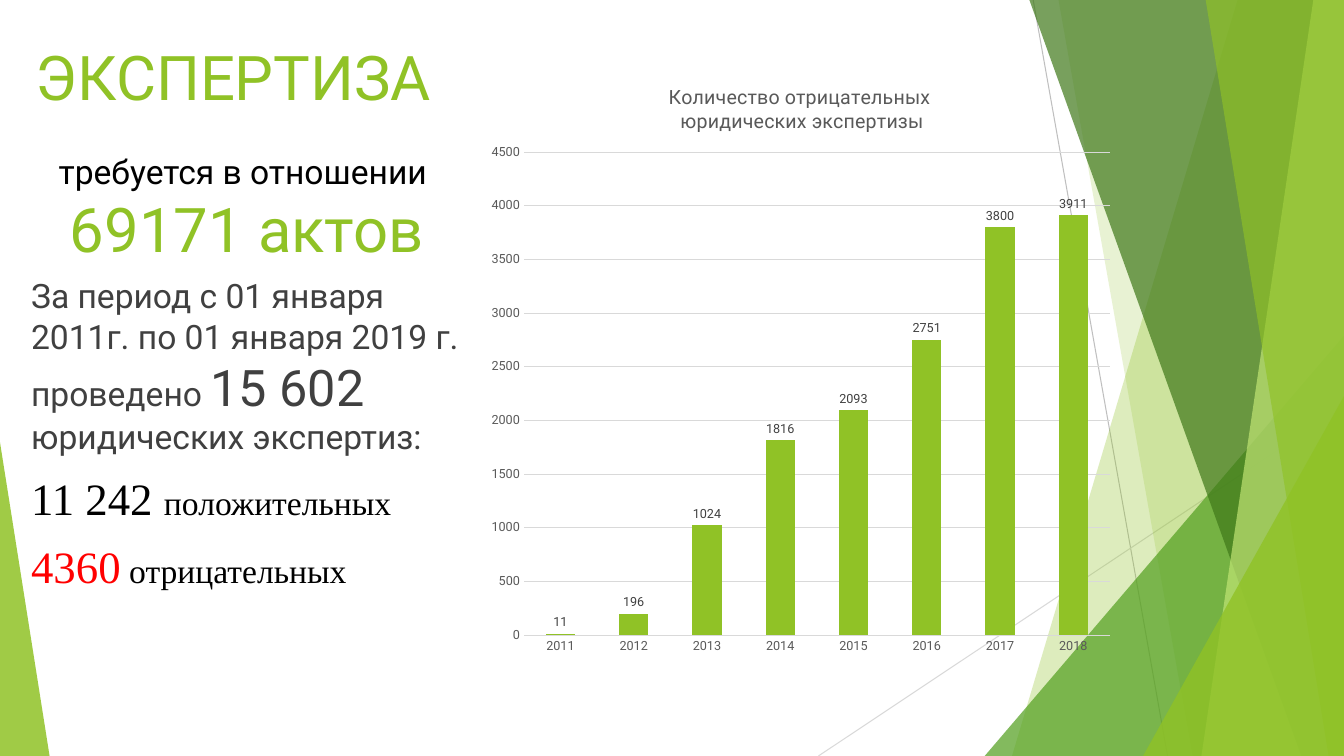
"""Builds the legal review slide with its column chart."""
from lxml import etree
from pptx import Presentation
from pptx.chart import data
from pptx.dml.color import RGBColor
from pptx.enum import chart as kinds, shapes, text
from pptx.oxml import ns
from pptx.util import Pt

LIME = RGBColor(0x90, 0xC2, 0x26)
GREEN = RGBColor(0x54, 0xA0, 0x21)
DARK = RGBColor(0x3F, 0x78, 0x19)
PALE = RGBColor(0xC0, 0xE4, 0x74)
BLACK = RGBColor(0, 0, 0)
RED = RGBColor(0xFF, 0, 0)
INK = RGBColor(0x40, 0x40, 0x40)
GREY = RGBColor(0x59, 0x59, 0x59)
SILVER = RGBColor(0xBF, 0xBF, 0xBF)
MIST = RGBColor(0xD9, 0xD9, 0xD9)
SANS = "Roboto"
SERIF = "Times New Roman"
WIDE, HIGH, TOP = 960, 540, -0.6


def sub(node, tag, **attrs):
    return etree.SubElement(node, ns.qn(tag), **attrs)


class Page:
    def __init__(self, slide):
        self.slide = slide
        self.items = slide.shapes

    def line(self, x1, y1, x2, y2, color):
        line = self.items.add_connector(
            shapes.MSO_CONNECTOR.STRAIGHT, Pt(x1), Pt(y1), Pt(x2), Pt(y2))
        line.line.color.rgb = color
        line.line.width = Pt(0.75)
        sub(line._element.spPr, "a:effectLst")

    def paint(self, shape, color, alpha):
        shape.shadow.inherit = False
        shape.fill.solid()
        shape.fill.fore_color.rgb = color
        shape.line.fill.background()
        tone = shape._element.spPr.find(".//" + ns.qn("a:srgbClr"))
        sub(tone, "a:alpha", val=str(alpha * 1000))

    def facet(self, top, base, color, alpha):
        form = self.items.build_freeform(Pt(top), Pt(TOP))
        ends = [(WIDE, TOP), (WIDE, HIGH), (base, HIGH)]
        form.add_line_segments([(Pt(x), Pt(y)) for x, y in ends])
        self.paint(form.convert_to_shape(), color, alpha)

    def wedge(self, x, y, wide, peak, color, alpha):
        shape = self.items.add_shape(
            shapes.MSO_SHAPE.ISOSCELES_TRIANGLE, Pt(x), Pt(y), Pt(wide), Pt(HIGH - y))
        shape.adjustments[0] = peak
        self.paint(shape, color, alpha)

    def font(self, font, size, color, name=SANS):
        font.size = Pt(size)
        font.name = name
        font.color.rgb = color
        font.bold = False

    def fill(self, frame, paras, align, gap=0):
        for i, runs in enumerate(paras):
            para = frame.add_paragraph() if i else frame.paragraphs[0]
            para.alignment = align
            para.space_before = Pt(gap)
            for words, *style in runs:
                run = para.add_run()
                run.text = words
                self.font(run.font, *style)

    def text(self, x, y, wide, high, paras, align=text.PP_ALIGN.CENTER,
             anchor=text.MSO_ANCHOR.BOTTOM, gap=0):
        frame = self.items.add_textbox(Pt(x), Pt(y), Pt(wide), Pt(high)).text_frame
        frame.word_wrap = True
        frame.vertical_anchor = anchor
        self.fill(frame, paras, align, gap)

    def place(self, node, spot, **sizes):
        old = node.find(ns.qn("c:layout"))
        if old is None:
            old = etree.Element(ns.qn("c:layout"))
            node.insert(1 if node.tag == ns.qn("c:title") else 0, old)
        box = sub(old, "c:manualLayout")
        if sizes:
            sub(box, "c:layoutTarget", val="inner")
        for key in "xy":
            sub(box, f"c:{key}Mode", val="edge")
        for key, part in {**spot, **sizes}.items():
            sub(box, f"c:{key}", val=str(part))

    def chart(self, x, y, wide, high, title, cats, vals):
        feed = data.CategoryChartData()
        feed.categories = cats
        feed.add_series("Series 1", vals)
        chart = self.items.add_chart(
            kinds.XL_CHART_TYPE.COLUMN_CLUSTERED,
            Pt(x), Pt(y), Pt(wide), Pt(high), feed).chart
        self.font(chart.font, 10, BLACK)
        chart.has_legend = False
        chart.has_title = True
        lines = [[(words, 14, GREY)] for words in title]
        self.fill(chart.chart_title.text_frame, lines, text.PP_ALIGN.CENTER)
        self.place(chart.chart_title._element, dict(x=0.29, y=0.04))
        for axis in (chart.category_axis, chart.value_axis):
            axis.major_tick_mark = axis.minor_tick_mark = kinds.XL_TICK_MARK.NONE
            axis.format.line.fill.background()
            self.font(axis.tick_labels.font, 9, GREY)
        axis = chart.value_axis
        axis.minimum_scale, axis.maximum_scale, axis.major_unit = 0, 4500, 500
        axis.major_gridlines.format.line.color.rgb = MIST
        axis.major_gridlines.format.line.width = Pt(0.75)
        plot = chart.plots[0]
        plot.gap_width = 150
        plot.vary_by_categories = False
        bars = plot.series[0]
        bars.format.fill.solid()
        bars.format.fill.fore_color.rgb = LIME
        tags = bars.data_labels
        tags.show_value = True
        tags.position = kinds.XL_LABEL_POSITION.OUTSIDE_END
        self.font(tags.font, 9, INK)
        area = chart._chartSpace.find(".//" + ns.qn("c:plotArea"))
        self.place(area, dict(x=0.07, y=0.157), w=0.91, h=0.792)


def main():
    deck = Presentation()
    deck.slide_width, deck.slide_height = Pt(WIDE), Pt(HIGH)
    page = Page(deck.slides.add_slide(deck.slide_layouts[6]))

    page.line(738, 0, 834, HIGH, SILVER)
    page.line(WIDE, 290, 584.6, HIGH, MIST)
    page.facet(884.2, 722.9, LIME, 30)
    page.facet(756, 851.8, LIME, 20)
    page.wedge(703.4, 239.8, 256.6, 1, GREEN, 72)
    page.facet(735.1, 929.5, DARK, 70)
    page.facet(938.2, 858.2, PALE, 70)
    page.facet(861.1, 949, LIME, 65)
    page.wedge(816.5, 283, 143.5, 1, LIME, 80)
    page.wedge(0, 316, 35.4, 0, LIME, 85)

    page.text(15.1, 16.6, 303.8, 67.7, [[("ЭКСПЕРТИЗА", 44, LIME)]])
    page.text(15.1, 193, 342, 327.6, [
        [("За период с 01 января 2011г. по 01 января 2019 г. проведено ", 24, INK),
         ("15 602 ", 36, INK), ("юридических экспертиз:", 24, INK)],
        [("11 242 ", 32, BLACK, SERIF), ("положительных", 24, BLACK, SERIF)],
        [("4360", 32, RED, SERIF), (" отрицательных", 24, BLACK, SERIF)],
    ], text.PP_ALIGN.LEFT, text.MSO_ANCHOR.TOP, 10)
    page.text(24.5, 98.6, 303.8, 94.3, [
        [("требуется в отношении ", 24, BLACK)], [("69171 актов", 44, LIME)]])
    page.chart(342, 40.3, 460, 435.6,
               ["Количество отрицательных ", "юридических экспертизы"],
               [str(year) for year in range(2011, 2019)],
               [11, 196, 1024, 1816, 2093, 2751, 3800, 3911])
    deck.save("out.pptx")


if __name__ == "__main__":
    main()
